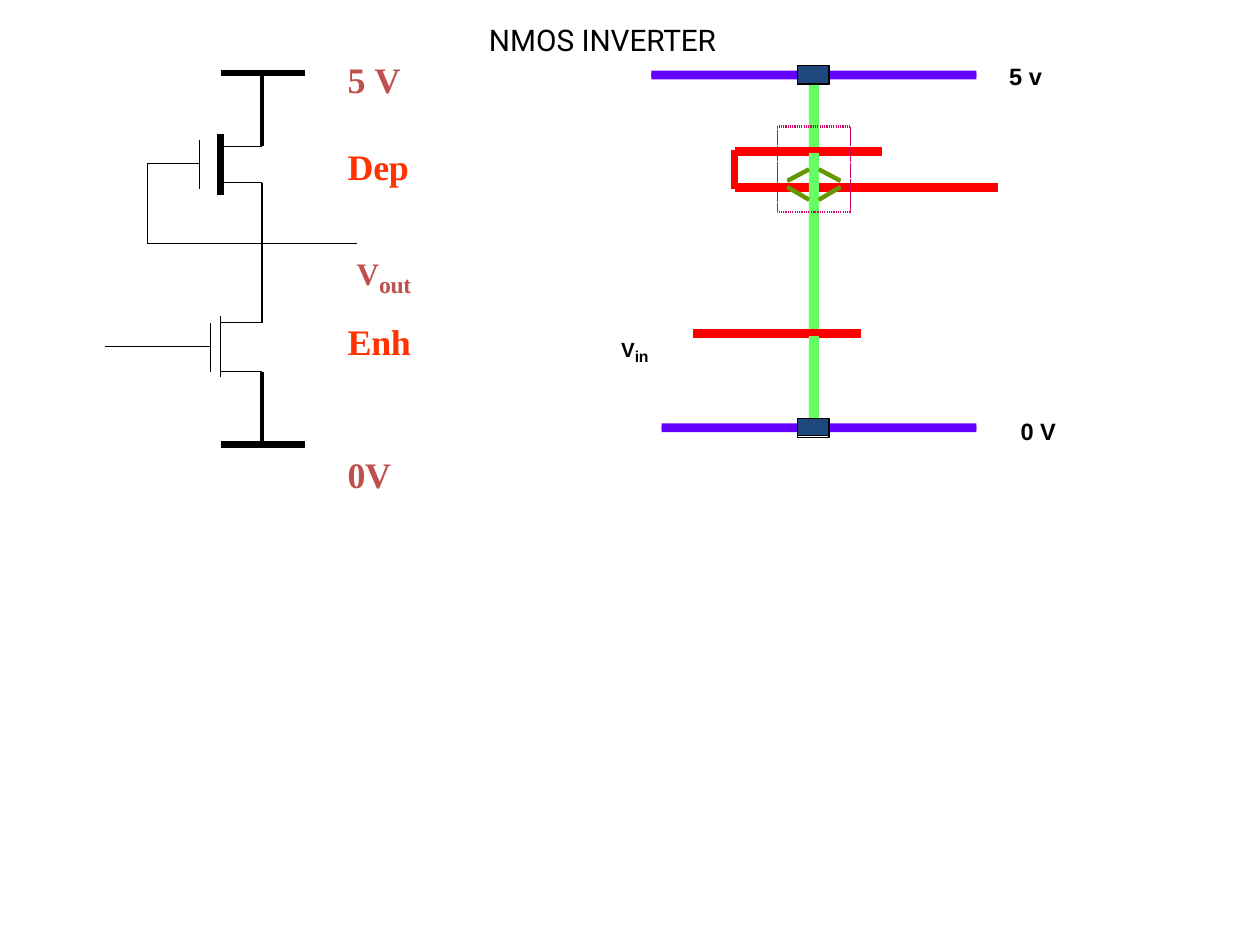
from pptx import Presentation
from pptx.dml.color import RGBColor
from pptx.enum.dml import MSO_LINE
from pptx.enum.shapes import MSO_CONNECTOR, MSO_SHAPE
from pptx.enum.text import MSO_AUTO_SIZE
from pptx.oxml.ns import qn
from pptx.util import Inches, Pt
from lxml.etree import SubElement

COLORS = {
    "black": "000000",
    "supply": "C0504D",
    "device": "FF3200",
    "poly": "FF0000",
    "diffusion": "65FF65",
    "implant": "CC0065",
    "buried": "659800",
    "metal": "6500FF",
    "contact": "1F487C",
}

deck = Presentation()
deck.slide_width = Inches(10)
deck.slide_height = Inches(7.5)
slide = deck.slides.add_slide(deck.slide_layouts[6])


def add_wire(x1, y1, x2, y2, width, color="black"):
    wire = slide.shapes.add_connector(
        MSO_CONNECTOR.STRAIGHT, Inches(x1), Inches(y1), Inches(x2), Inches(y2))
    wire.line.color.rgb = RGBColor.from_string(COLORS[color])
    wire.line.width = Pt(width)
    SubElement(wire._element.spPr, qn("a:effectLst"))


def add_box(x, y, width, height, fill=None, outline=None, dash=None):
    box = slide.shapes.add_shape(
        MSO_SHAPE.RECTANGLE, Inches(x), Inches(y), Inches(width), Inches(height))
    box.shadow.inherit = False
    if fill:
        box.fill.solid()
        box.fill.fore_color.rgb = RGBColor.from_string(COLORS[fill])
    else:
        box.fill.background()
    if outline:
        box.line.color.rgb = RGBColor.from_string(COLORS[outline])
        box.line.width = Pt(0.64)
        box.line.dash_style = dash
    else:
        box.line.fill.background()


THICK, MEDIUM, THIN, HAIR = 3.82, 1.91, 0.64, 0.42

circuit_wires = [
    (1.75, 0.58, 2.42, 0.58, THICK),
    (2.08, 0.58, 2.08, 1.16, MEDIUM),
    (2.08, 1.16, 1.75, 1.16, THIN),
    (1.75, 1.06, 1.75, 1.55, THICK),
    (1.75, 1.45, 2.08, 1.45, THIN),
    (2.08, 1.45, 2.08, 2.56, THIN),
    (1.58, 1.11, 1.58, 1.5, HAIR),
    (1.58, 1.3, 1.17, 1.3, THIN),
    (1.17, 1.3, 1.17, 1.93, THIN),
    (1.17, 1.93, 2.83, 1.93, THIN),
    (2.08, 2.56, 1.75, 2.56, THIN),
    (1.75, 2.51, 1.75, 2.99, HAIR),
    (1.75, 2.95, 2.08, 2.95, THIN),
    (1.67, 2.56, 1.67, 2.95, HAIR),
    (1.67, 2.75, 0.83, 2.75, THIN),
    (2.08, 2.95, 2.08, 3.53, MEDIUM),
    (1.75, 3.53, 2.42, 3.53, THICK),
]
for x1, y1, x2, y2, width in circuit_wires:
    add_wire(x1, y1, x2, y2, width)

channel_left, channel_right = 6.42, 6.5

for left, right, y in [(5.83, 7.92, 1.5), (5.83, 7, 1.21), (5.5, 6.83, 2.66), (5.83, 7.92, 1.48)]:
    add_wire(left, y, channel_left, y, THICK, "poly")
    add_wire(channel_right, y, right, y, THICK, "poly")
add_wire(5.83, 1.21, 5.83, 1.5, THICK, "poly")
add_box(channel_left, 0.66, channel_right - channel_left, 2.66, "diffusion")
for x1, y1, x2, y2 in [(5.83, 1.19, 7, 1.19), (5.83, 1.19, 5.83, 1.48), (5.5, 2.64, 6.83, 2.64)]:
    add_wire(x1, y1, x2, y2, THICK, "poly")

for top in (1.01, 1):
    add_box(6.17, top, 0.58, 0.68, outline="implant", dash=MSO_LINE.ROUND_DOT)
for shift in (0.01, 0):
    for outer, inner in [(6.25, channel_left), (6.67, channel_right)]:
        add_wire(outer, 1.43 + shift, inner, 1.34 + shift, MEDIUM, "buried")
        add_wire(outer, 1.48 + shift, inner, 1.58 + shift, MEDIUM, "buried")

contact_left, contact_width = 6.33, 0.25
contact_right = contact_left + contact_width
for rail_left, rail_top, contact_top in [(5.17, 0.56, 0.52), (5.25, 3.36, 3.32)]:
    for shift in (0.02, 0):
        add_box(rail_left, rail_top + shift, contact_left - rail_left, 0.05, "metal")
        add_box(contact_right, rail_top + shift, 7.75 - contact_right, 0.05, "metal")
    add_box(contact_left, contact_top + 0.01, contact_width, 0.14, outline="black")
    add_box(contact_left, contact_top, contact_width, 0.14, "contact", "black")

SERIF, SANS = "Times New Roman", "Arial"
labels = [
    (2.75, 0.45, 0.52, 0.36, SERIF, "supply", 0.9, 0.01, [("5 ", 20.5, 0, 0), ("V", 20.5, 0, -50)]),
    (2.75, 1.14, 0.61, 0.36, SERIF, "device", 0.9, 0.01, [("Dep", 20.5, 0, -20)]),
    (2.79, 1.89, 0.62, 0.36, SERIF, "supply", 0.9, 0.04, [("V", 30.8, 14, -30), ("out", 13.5, 0, -20)]),
    (2.75, 2.53, 0.63, 0.36, SERIF, "device", 0.9, 0.01, [("Enh", 20.5, 0, -20)]),
    (2.75, 3.58, 0.44, 0.36, SERIF, "supply", 0.9, 0.01, [("0V", 20.5, 0, -20)]),
    (8.09, 3.3, 0.37, 0.24, SANS, "black", 1.1, 0.01, [("0 ", 13.5, 0, 0), ("V", 13.5, 0, -50)]),
    (4.89, 2.59, 0.38, 0.24, SANS, "black", 1.1, 0.04, [("V", 20.2, 14, -40), ("in", 9, 0, -20)]),
    (8, 0.48, 0.34, 0.24, SANS, "black", 1.1, 0.01, [("5 ", 13.5, 0, 0), ("v", 13.5, 0, -50)]),
    (3.87, 0.16, 2.34, 0.3, "Roboto", "black", 1, 0.01, [("NMOS ", 17, 0, 0), ("INVERTER", 17, 0, -10)]),
]
for x, y, width, height, font, color, space, indent, parts in labels:
    label = slide.shapes.add_textbox(Inches(x), Inches(y), Inches(width), Inches(height))
    frame = label.text_frame
    frame.word_wrap = True
    frame.auto_size = MSO_AUTO_SIZE.SHAPE_TO_FIT_TEXT
    frame.margin_left = frame.margin_right = frame.margin_bottom = 0
    frame.margin_top = Inches(0.01)
    paragraph = frame.paragraphs[0]
    paragraph.space_before = Pt(space)
    paragraph._p.get_or_add_pPr().set("marL", str(Inches(indent)))
    for words, size, rise, spacing in parts:
        run = paragraph.add_run()
        run.text = words
        run.font.name = font
        run.font.size = Pt(size)
        run.font.bold = font != "Roboto"
        run.font.color.rgb = RGBColor.from_string(COLORS[color])
        properties = run._r.get_or_add_rPr()
        properties.set("spc", str(spacing))
        if rise:
            properties.set("baseline", str(rise * 1000))

deck.save("out.pptx")
